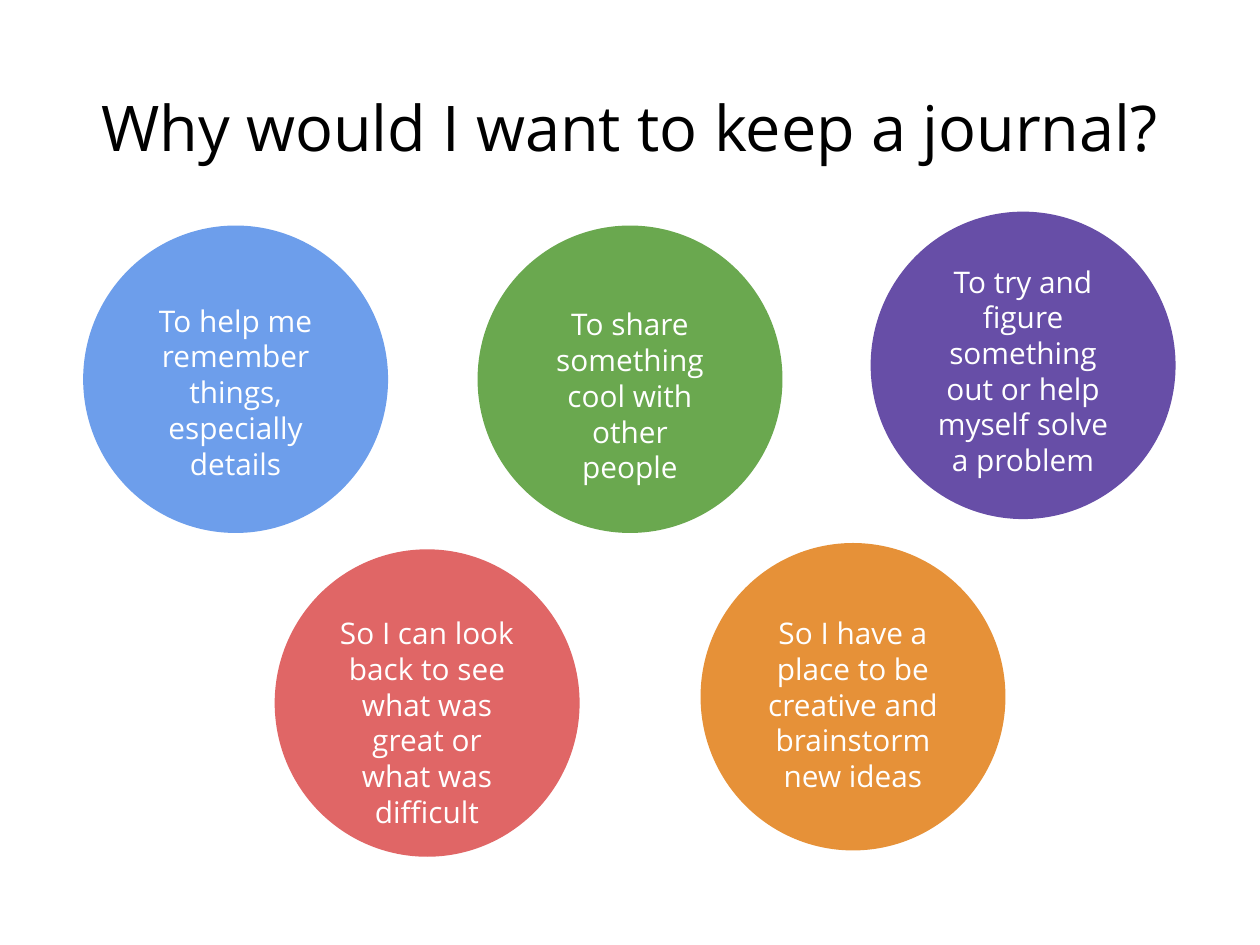
from dataclasses import dataclass

from pptx import Presentation
from pptx import util as u
from pptx.dml.color import RGBColor
from pptx.enum import shapes, text

FONT = "Open Sans"
COLORS = {
    "black": "000000",
    "white": "FFFFFF",
    "blue": "6D9EEB",
    "red": "E06666",
    "purple": "674EA7",
    "green": "6AA84F",
    "orange": "E69138",
}
CIRCLE_W, CIRCLE_H = 2.42, 2.44


@dataclass
class Reason:
    words: str
    color: str
    left: float
    top: float
    text_top: float
    text_w: float
    text_h: float


REASONS = [
    Reason("To help me remember things, especially details",
           "blue", 0.66, 1.79, 2.3, 1.66, 1.42),
    Reason("So I can look back to see what was great or what was difficult",
           "red", 2.18, 4.36, 4.78, 1.66, 1.42),
    Reason("To try and figure something out or help myself solve a problem",
           "purple", 6.91, 1.68, 1.99, 1.66, 1.48),
    Reason("To share something cool with other people",
           "green", 3.79, 1.79, 2.33, 1.58, 1.53),
    Reason("So I have a place to be creative and brainstorm new ideas",
           "orange", 5.56, 4.31, 4.78, 1.58, 1.42),
]


def rgb(name: str) -> RGBColor:
    return RGBColor.from_string(COLORS[name])


def write(sp, words: str, size: float, color: str, anchor) -> None:
    tf = sp.text_frame
    tf.word_wrap = True
    tf.auto_size = text.MSO_AUTO_SIZE.NONE
    tf.vertical_anchor = anchor
    tf.margin_left = tf.margin_right = u.Inches(0.1)
    tf.margin_top = tf.margin_bottom = u.Inches(0.1)
    p = tf.paragraphs[0]
    p.text = words
    p.alignment = text.PP_ALIGN.CENTER
    p.font.name = FONT
    p.font.size = u.Pt(size)
    p.font.color.rgb = rgb(color)


def add_title(s, words: str) -> None:
    sp = s.shapes.title
    sp.left, sp.top = u.Inches(0.5), u.Inches(0.41)
    sp.width, sp.height = u.Inches(9), u.Inches(0.99)
    write(sp, words, 36, "black", text.MSO_ANCHOR.BOTTOM)


def add_circle(s, reason: Reason) -> None:
    sp = s.shapes.add_shape(
        shapes.MSO_SHAPE.OVAL, u.Inches(reason.left), u.Inches(reason.top),
        u.Inches(CIRCLE_W), u.Inches(CIRCLE_H))
    sp.shadow.inherit = False
    sp.fill.solid()
    sp.fill.fore_color.rgb = rgb(reason.color)
    sp.line.fill.background()


def add_label(s, reason: Reason) -> None:
    left = reason.left + (CIRCLE_W - reason.text_w) / 2
    sp = s.shapes.add_textbox(
        u.Inches(left), u.Inches(reason.text_top),
        u.Inches(reason.text_w), u.Inches(reason.text_h))
    write(sp, reason.words, 17, "white", text.MSO_ANCHOR.TOP)


def main() -> None:
    prs = Presentation()
    prs.slide_width, prs.slide_height = u.Inches(10), u.Inches(7.5)
    s = prs.slides.add_slide(prs.slide_layouts[5])
    add_title(s, "Why would I want to keep a journal?")
    for reason in REASONS:
        add_circle(s, reason)
    for reason in REASONS:
        add_label(s, reason)
    prs.save("out.pptx")


if __name__ == "__main__":
    main()
